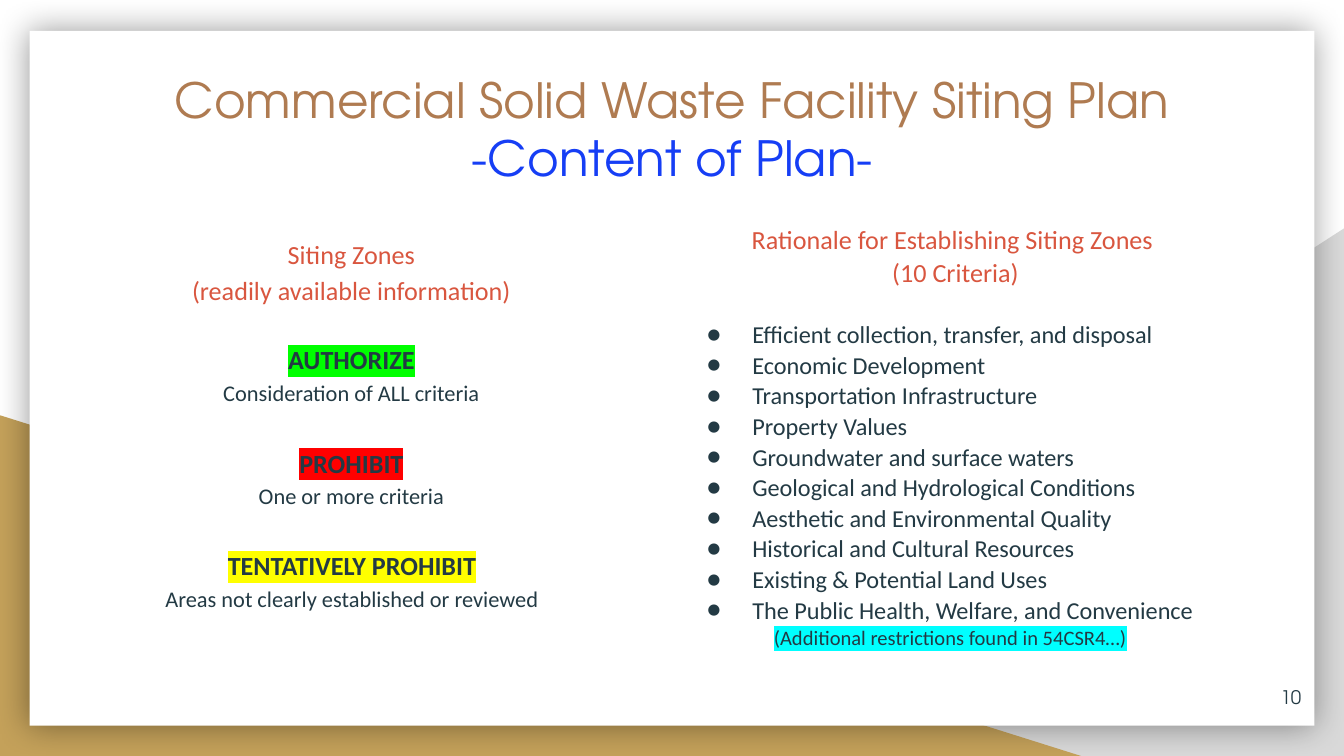
from dataclasses import dataclass
from typing import Optional

from lxml.etree import SubElement
from pptx import Presentation
from pptx.dml.color import RGBColor
from pptx.enum.shapes import MSO_SHAPE
from pptx.enum.text import MSO_ANCHOR, PP_ALIGN
from pptx.oxml import parse_xml
from pptx.oxml.ns import nsdecls, qn
from pptx.util import Inches, Pt

BODY_FONT = "Calibri"
DISPLAY_FONT = "TeX Gyre Adventor"
INK = "233A44"
CORAL = "D9563F"
WHITE = "FFFFFF"


@dataclass
class Line:
    text: str
    size: float
    color: str = INK
    font: str = BODY_FONT
    align: PP_ALIGN = PP_ALIGN.CENTER
    spacing: Optional[float] = None
    gap: float = 0
    margin: float = 0
    indent: float = 0
    bullet: str = ""
    bold: bool = False
    highlight: str = ""


@dataclass
class Panel:
    left: float
    top: float
    width: float
    height: float
    kind: MSO_SHAPE = MSO_SHAPE.RECTANGLE
    fill: str = WHITE
    outline: str = ""

    def bounds(self) -> list[int]:
        return [Inches(length) for length in
                (self.left, self.top, self.width, self.height)]


@dataclass
class Zone:
    name: str
    basis: str
    highlight: str
    gap: float
    margin: float


def rgb(value: str) -> RGBColor:
    return RGBColor.from_string(value)


def apply_format(target, values: dict) -> None:
    for name, value in values.items():
        setattr(target, name, value)


def add_panel(slide, panel: Panel):
    shape = slide.shapes.add_shape(panel.kind, *panel.bounds())
    shape.shadow.inherit = False
    shape.fill.solid()
    shape.fill.fore_color.rgb = rgb(panel.fill)
    if panel.outline:
        shape.line.color.rgb = rgb(panel.outline)
        shape.line.width = Pt(0.75)
    else:
        shape.line.fill.background()
    return shape


def add_glow(shape) -> None:
    effects = shape._element.spPr.find(qn("a:effectLst"))
    effects.append(parse_xml(
        f'<a:outerShdw {nsdecls("a")} blurRad="{Pt(18)}" dist="0" dir="0" '
        'algn="ctr" rotWithShape="0"><a:srgbClr val="000000">'
        '<a:alpha val="40000"/></a:srgbClr></a:outerShdw>'))


def write_line(paragraph, line: Line) -> None:
    properties = paragraph._p.get_or_add_pPr()
    properties.set("marL", str(Inches(line.margin)))
    properties.set("indent", str(Inches(line.indent)))
    if line.bullet:
        tint = SubElement(properties, qn("a:buClr"))
        SubElement(tint, qn("a:srgbClr"), val=line.color)
        SubElement(properties, qn("a:buFont"), typeface=line.font)
        SubElement(properties, qn("a:buChar"), char=line.bullet)
    apply_format(paragraph, {
        "alignment": line.align,
        "line_spacing": line.spacing,
        "space_before": Pt(line.gap),
    })
    run = paragraph.add_run()
    run.text = line.text
    apply_format(run.font, {
        "size": Pt(line.size), "bold": line.bold, "name": line.font})
    run.font.color.rgb = rgb(line.color)
    if line.highlight:
        marker = parse_xml(
            f'<a:highlight {nsdecls("a")}>'
            f'<a:srgbClr val="{line.highlight}"/></a:highlight>')
        run._r.rPr.find(qn("a:solidFill")).addnext(marker)


def write_text(shape, lines: list[Line],
               anchor: MSO_ANCHOR = MSO_ANCHOR.TOP) -> None:
    frame = shape.text_frame
    inset = Inches(0.1)
    apply_format(frame, {
        "word_wrap": True, "vertical_anchor": anchor,
        "margin_left": inset, "margin_right": inset,
        "margin_top": inset, "margin_bottom": inset,
    })
    for index, line in enumerate(lines):
        paragraph = frame.add_paragraph() if index else frame.paragraphs[0]
        write_line(paragraph, line)


CRITERIA = [
    "Efficient collection, transfer, and disposal",
    "Economic Development",
    "Transportation Infrastructure",
    "Property Values",
    "Groundwater and surface waters",
    "Geological and Hydrological Conditions",
    "Aesthetic and Environmental Quality",
    "Historical and Cultural Resources",
    "Existing & Potential Land Uses",
    "The Public Health, Welfare, and Convenience",
]
ZONES = [
    Zone("AUTHORIZE", "Consideration of ALL criteria", "00FF00", 17.8, 0.16),
    Zone("PROHIBIT", "One or more criteria", "FF0000", 19.4, 0.16),
    Zone("TENTATIVELY PROHIBIT", "Areas not clearly established or reviewed",
         "FFFF00", 19.2, 0.17),
]


def main() -> None:
    deck = Presentation()
    deck.slide_width = Inches(10)
    deck.slide_height = deck.slide_width * 9 // 16
    slide = deck.slides.add_slide(deck.slide_layouts[6])

    grey_corner = add_panel(slide, Panel(
        3.92, 1.7, 6.08, 3.93, MSO_SHAPE.RIGHT_TRIANGLE, "D9D9D9"))
    grey_corner._element.spPr.xfrm.set("flipH", "1")
    add_panel(slide, Panel(
        0, 3.09, 8.06, 2.54, MSO_SHAPE.RIGHT_TRIANGLE, "C4A15A"))
    add_glow(add_panel(slide, Panel(0.22, 0.23, 9.56, 5.17)))

    heading = add_panel(slide, Panel(0.9, 0.42, 8.21, 1.27, outline=WHITE))
    write_text(heading, [
        Line("Commercial Solid Waste Facility Siting Plan", 26, "AF7B51",
             DISPLAY_FONT),
        Line("-Content of Plan-", 26, "163EF5", DISPLAY_FONT),
    ])

    rationale = [
        Line(text, 14, CORAL, spacing=1.05, margin=0.16)
        for text in ("Rationale for Establishing Siting Zones ",
                     "(10 Criteria)")
    ]
    rationale += [
        Line(text, 13, align=PP_ALIGN.LEFT, spacing=1.05, margin=0.5,
             indent=-0.34, bullet="●", gap=0 if index else 16.4)
        for index, text in enumerate(CRITERIA)
    ]
    rationale.append(Line(
        "(Additional restrictions found in 54CSR4…)", 11,
        align=PP_ALIGN.LEFT, spacing=1.05, margin=0.66, highlight="00FFFF"))
    write_text(add_panel(slide, Panel(5, 1.55, 4.06, 3.63)), rationale)

    page_number = slide.shapes.add_textbox(
        *Panel(9.18, 4.97, 0.6, 0.43).bounds())
    write_text(page_number, [
        Line("10", 10, font=DISPLAY_FONT, align=PP_ALIGN.RIGHT),
    ], MSO_ANCHOR.MIDDLE)

    siting = [
        Line(text, 14, CORAL, spacing=1.15, margin=0.16)
        for text in ("Siting Zones", "(readily available information)")
    ]
    for zone in ZONES:
        siting += [
            Line(zone.name, 14, spacing=1.15, margin=zone.margin,
                 gap=zone.gap, bold=True, highlight=zone.highlight),
            Line(zone.basis, 12, spacing=1.15, margin=zone.margin),
        ]
    write_text(add_panel(slide, Panel(0.36, 1.64, 4.35, 3.45)), siting)

    deck.save("out.pptx")


if __name__ == "__main__":
    main()
